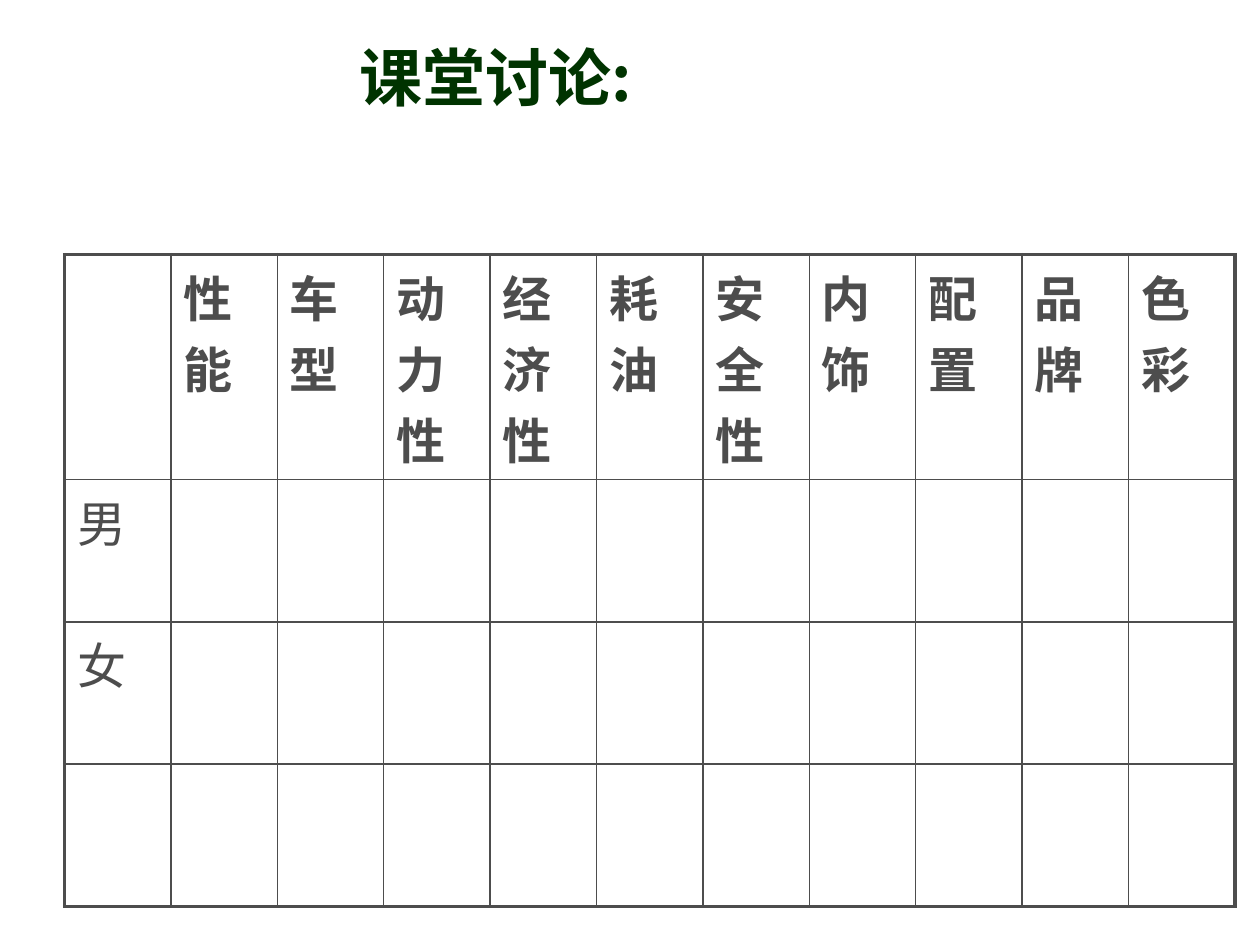
from typing import NamedTuple

from lxml import etree
from pptx import Presentation
from pptx import util as u
from pptx.dml import color
from pptx.enum import text
from pptx.oxml import ns

FONT_LATIN = "Arial"
FONT_CJK = "Noto Sans CJK SC"
GREEN, GREY, WHITE = "003300", "4D4D4D", "FFFFFF"
THICK, THIN = 2.25, 1
TABLE_WIDTH = 23.6
HEADINGS = ["", "性能", "车型", "动力性", "经济性", "耗油", "安全性", "内饰", "配置", "品牌", "色彩"]


class TableRow(NamedTuple):
    labels: list[str]
    height: float
    bold: bool = False


ROWS = [
    TableRow(HEADINGS, 3.81, True),
    TableRow(["男"], 2.87),
    TableRow(["女"], 2.87),
    TableRow([], 2.87),
]


def rgb(value: str) -> color.RGBColor:
    return color.RGBColor.from_string(value)


def add_run(paragraph, words: str, size: float, colour: str, bold: bool, latin: str) -> None:
    run = paragraph.add_run()
    run.text = words
    run.font.size = u.Pt(size)
    run.font.bold = bold
    run.font.color.rgb = rgb(colour)
    run.font.name = latin
    properties = run.font._element
    etree.SubElement(properties, ns.qn("a:ea"), typeface=FONT_CJK)


def set_borders(cell, widths: dict[str, float]) -> None:
    properties = cell._tc.get_or_add_tcPr()
    for position, (side, width) in enumerate(widths.items()):
        line = etree.Element(ns.qn(f"a:ln{side}"), w=str(u.Pt(width)))
        fill = etree.SubElement(line, ns.qn("a:solidFill"))
        etree.SubElement(fill, ns.qn("a:srgbClr"), val=GREY)
        properties.insert(position, line)


def add_title(slide) -> None:
    title = slide.shapes.title
    title.left, title.top = u.Cm(6.99), u.Cm(0.76)
    title.width, title.height = u.Cm(18.41), u.Cm(1.57)
    frame = title.text_frame
    frame.auto_size = text.MSO_AUTO_SIZE.NONE
    frame.vertical_anchor = text.MSO_ANCHOR.MIDDLE
    paragraph = frame.paragraphs[0]
    paragraph.alignment = text.PP_ALIGN.LEFT
    add_run(paragraph, "课堂讨论:", 36, GREEN, True, FONT_CJK)


def add_survey_table(slide, rows: list[TableRow]) -> None:
    columns = len(HEADINGS)
    height = sum(row.height for row in rows)
    table = slide.shapes.add_table(
        len(rows), columns, u.Cm(1.3), u.Cm(5.13), u.Cm(TABLE_WIDTH), u.Cm(height)
    ).table
    table.first_row = table.horz_banding = False
    for column in table.columns:
        column.width = u.Cm(TABLE_WIDTH / columns)
    for row_index, row in enumerate(rows):
        table.rows[row_index].height = u.Cm(row.height)
        for column_index in range(columns):
            cell = table.cell(row_index, column_index)
            cell.fill.solid()
            cell.fill.fore_color.rgb = rgb(WHITE)
            outer = {
                "L": column_index == 0,
                "R": column_index == columns - 1,
                "T": row_index == 0,
                "B": row_index == len(rows) - 1,
            }
            set_borders(cell, {side: THICK if edge else THIN for side, edge in outer.items()})
            if column_index < len(row.labels) and row.labels[column_index]:
                paragraph = cell.text_frame.paragraphs[0]
                add_run(paragraph, row.labels[column_index], 28, GREY, row.bold, FONT_LATIN)


def main() -> None:
    presentation = Presentation()
    presentation.slide_width, presentation.slide_height = u.Cm(25.4), u.Cm(19.05)
    slide = presentation.slides.add_slide(presentation.slide_layouts[5])
    add_title(slide)
    add_survey_table(slide, ROWS)
    presentation.save("out.pptx")


if __name__ == "__main__":
    main()
